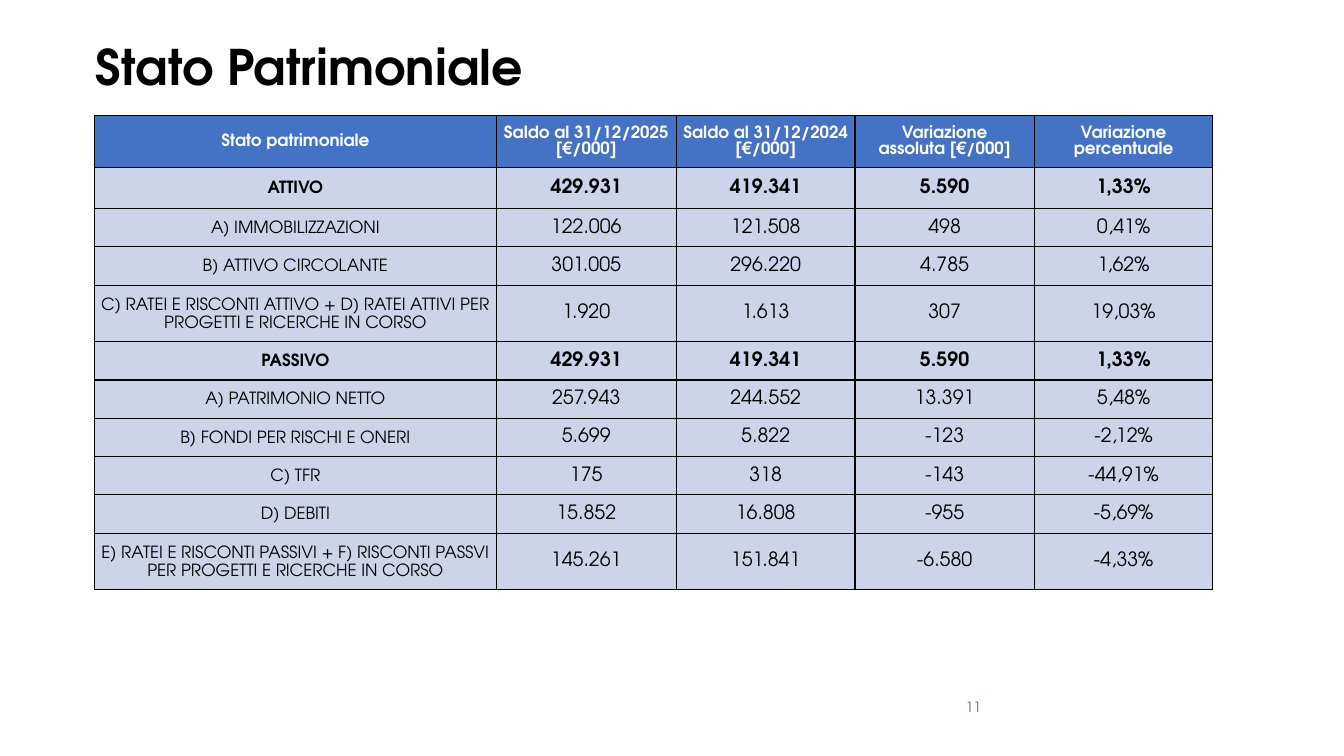
from lxml import etree
from pptx import Presentation
from pptx import util as u
from pptx.dml.color import RGBColor
from pptx.enum import text
from pptx.oxml import ns

FONT = "TeX Gyre Adventor"
COLORS = {
    "black": "000000",
    "white": "FFFFFF",
    "header": "4472C4",
    "body": "CDD4EA",
    "page": "426EB0",
}
COL_WIDTHS = [3.98, 1.79, 1.77, 1.78, 1.77]
HEADER_HEIGHT, TOTAL_HEIGHT, LINE_HEIGHT, WRAPPED_HEIGHT = 0.51, 0.41, 0.38, 0.56
HEADERS = [
    "Stato patrimoniale",
    "Saldo al 31/12/2025 [€/000]",
    "Saldo al 31/12/2024 [€/000]",
    "Variazione\nassoluta [€/000]",
    "Variazione percentuale",
]
BALANCE = [
    ("ATTIVO", "429.931", "419.341", "5.590", "1,33%"),
    ("A) IMMOBILIZZAZIONI", "122.006", "121.508", "498", "0,41%"),
    ("B) ATTIVO CIRCOLANTE", "301.005", "296.220", "4.785", "1,62%"),
    ("C) RATEI E RISCONTI ATTIVO + D) RATEI ATTIVI PER PROGETTI E RICERCHE IN CORSO",
     "1.920", "1.613", "307", "19,03%"),
    ("PASSIVO", "429.931", "419.341", "5.590", "1,33%"),
    ("A) PATRIMONIO NETTO", "257.943", "244.552", "13.391", "5,48%"),
    ("B) FONDI PER RISCHI E ONERI", "5.699", "5.822", "-123", "-2,12%"),
    ("C) TFR", "175", "318", "-143", "-44,91%"),
    ("D) DEBITI", "15.852", "16.808", "-955", "-5,69%"),
    ("E) RATEI E RISCONTI PASSIVI + F) RISCONTI PASSVI PER PROGETTI E RICERCHE IN CORSO",
     "145.261", "151.841", "-6.580", "-4,33%"),
]


def write(tf, content, size=12, color="black", bold=False, align="LEFT", spacing=1.0):
    tf.word_wrap = True
    for i, line in enumerate(content.split("\n")):
        p = tf.paragraphs[0] if i == 0 else tf.add_paragraph()
        p.alignment = getattr(text.PP_ALIGN, align)
        p.line_spacing = spacing
        r = p.add_run()
        r.text = line
        r.font.name = FONT
        r.font.size = u.Pt(size)
        r.font.bold = bold
        r.font.color.rgb = RGBColor.from_string(COLORS[color])


def add_label(s, box, content, **fmt):
    sp = s.shapes.add_textbox(*map(u.Inches, box))
    write(sp.text_frame, content, **fmt)


def style_cell(cell, fill, inset_x, inset_y):
    cell.vertical_anchor = text.MSO_ANCHOR.MIDDLE
    cell.margin_left = cell.margin_right = u.Inches(inset_x)
    cell.margin_top = cell.margin_bottom = u.Inches(inset_y)
    tc_pr = cell._tc.get_or_add_tcPr()
    for side in ("lnL", "lnR", "lnT", "lnB"):
        ln = etree.SubElement(tc_pr, ns.qn(f"a:{side}"), w=str(u.Pt(0.94)))
        solid = etree.SubElement(ln, ns.qn("a:solidFill"))
        etree.SubElement(solid, ns.qn("a:srgbClr"), val=COLORS["black"])
    cell.fill.solid()
    cell.fill.fore_color.rgb = RGBColor.from_string(COLORS[fill])


def row_height(label):
    if label == "ATTIVO":
        return TOTAL_HEIGHT
    return WRAPPED_HEIGHT if len(label) > 40 else LINE_HEIGHT


def add_balance_table(s, left, top):
    heights = [HEADER_HEIGHT] + [row_height(row[0]) for row in BALANCE]
    box = (left, top, sum(COL_WIDTHS), sum(heights))
    table = s.shapes.add_table(len(heights), len(COL_WIDTHS), *map(u.Inches, box)).table
    table.horz_banding = False
    for col, width in zip(table.columns, COL_WIDTHS):
        col.width = u.Inches(width)
    for row, height in zip(table.rows, heights):
        row.height = u.Inches(height)
    for c, header in enumerate(HEADERS):
        cell = table.cell(0, c)
        style_cell(cell, "header", 0.03, 0.03)
        write(cell.text_frame, header, color="white", bold=True, align="CENTER")
    for r, row in enumerate(BALANCE, 1):
        bold = row[0] in ("ATTIVO", "PASSIVO")
        for c, value in enumerate(row):
            cell = table.cell(r, c)
            if c == 0:
                style_cell(cell, "body", 0.03, 0.03)
                write(cell.text_frame, value, bold=bold, align="CENTER", spacing=1.15)
            else:
                style_cell(cell, "body", 0.02, 0)
                write(cell.text_frame, value, size=14, bold=bold, align="CENTER")


def main():
    prs = Presentation()
    prs.slide_width, prs.slide_height = u.Inches(13.33), u.Inches(7.5)
    s = prs.slides.add_slide(prs.slide_layouts[6])
    add_label(s, (0.85, 0.38, 11.65, 1.09), "Stato Patrimoniale",
              size=35, bold=True, spacing=0.9)
    add_balance_table(s, 0.94, 1.15)
    add_label(s, (9.48, 6.88, 3, 0.4), "11", size=10, color="page")
    prs.save("out.pptx")


if __name__ == "__main__":
    main()
